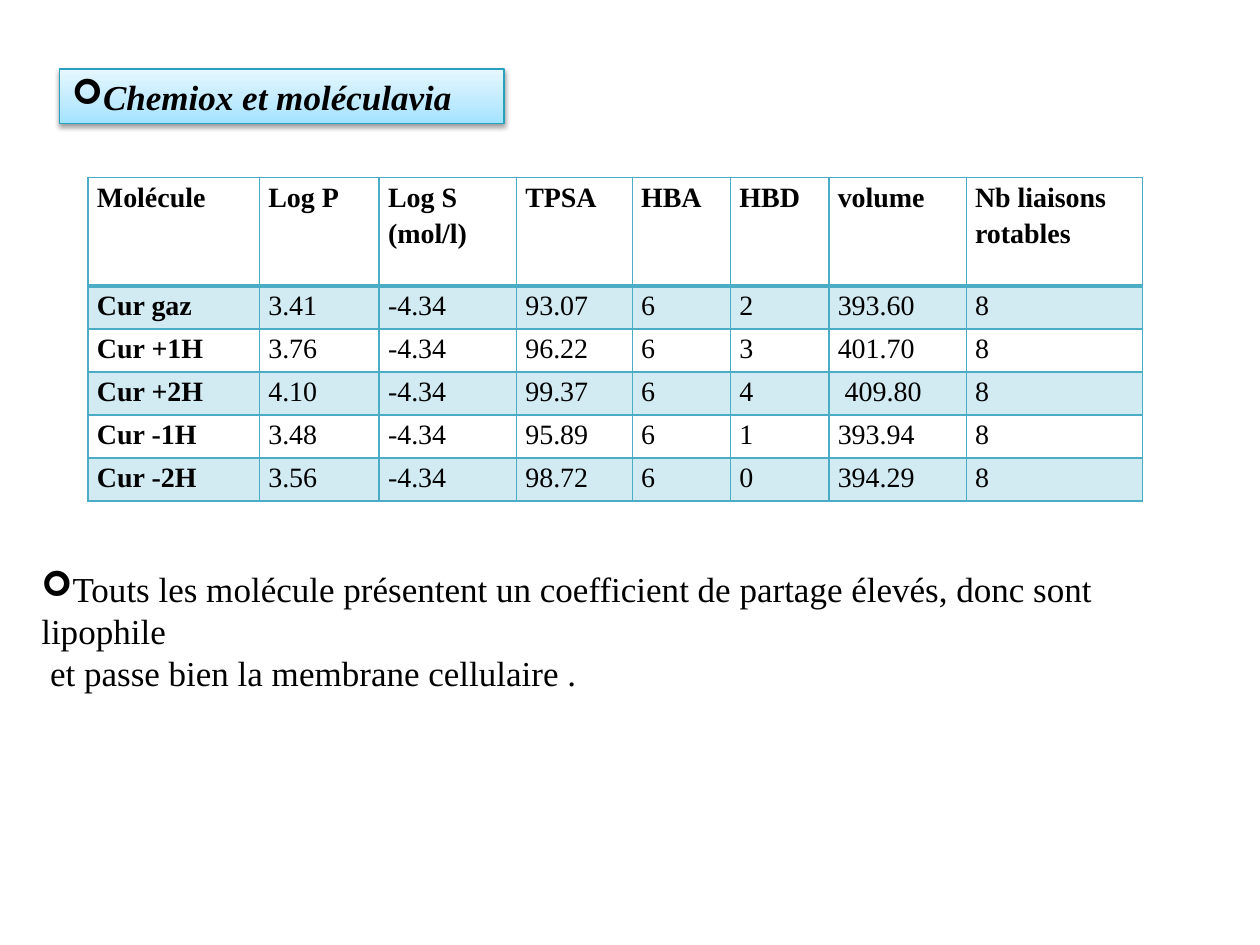
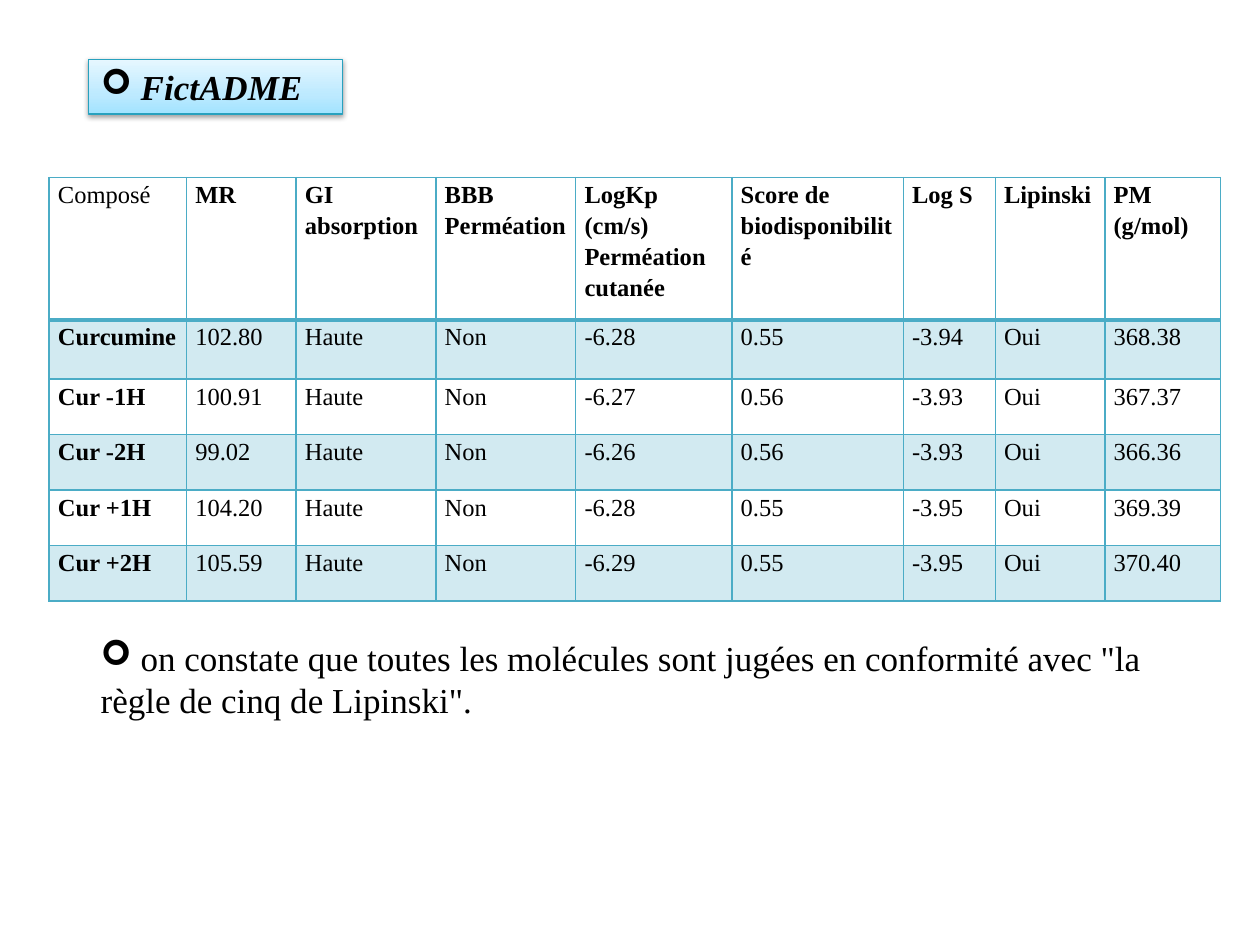
from pptx import Presentation, util as u
from pptx.dml.color import RGBColor
from pptx.enum import text as t
from pptx.oxml import parse_xml
from pptx.oxml.ns import nsdecls

FONT = "Times New Roman"
COLORS = {
    "ink": "000000",
    "title_line": "28A1BE",
    "grid": "4BACC6",
    "band": "D2EAF1",
}
TITLE_GRADIENT = [(0, "A1E3FF"), (35, "BDEAFF"), (100, "E6F7FF")]
WIDTH, HEIGHT = u.Inches(10), u.Inches(7.5)


# Lengths are percentages of the slide's width and height
def across(percent):
    return round(WIDTH * percent / 100)


def down(percent):
    return round(HEIGHT * percent / 100)


def area(left, top, width, height):
    return across(left), down(top), across(width), down(height)


def drawing_xml(tag, content="", attributes=""):
    return parse_xml(f'<a:{tag} {nsdecls("a")} {attributes}>{content}</a:{tag}>')


def write(frame, content, size=20, bold=False, italic=False, spacing=1.0, bullet=False):
    """Fill a frame; each line of content is a paragraph, the first may have a bullet."""
    frame.text = content
    frame.word_wrap = True
    for paragraph in frame.paragraphs:
        paragraph.alignment = t.PP_ALIGN.LEFT
        paragraph.line_spacing = spacing
        for run in paragraph.runs:
            font = run.font
            font.name, font.size = FONT, u.Pt(size)
            font.bold, font.italic = bold, italic
            font.color.rgb = RGBColor.from_string(COLORS["ink"])
    if bullet:
        properties = frame.paragraphs[0]._p.get_or_add_pPr()
        properties.set("marL", "0")
        properties.set("indent", "0")
        properties.append(drawing_xml("buFont", attributes='typeface="Wingdings"'))
        properties.append(drawing_xml("buChar", attributes='char="➢"'))


def add_title(slide, heading, box):
    """Title as a blue gradient label with a soft shadow."""
    title = slide.shapes.title
    title.left, title.top, title.width, title.height = area(*box)
    stops = "".join(
        f'<a:gs pos="{position * 1000}"><a:srgbClr val="{color}"/></a:gs>'
        for position, color in TITLE_GRADIENT)
    properties = title._element.spPr
    properties.append(drawing_xml(
        "gradFill", f'<a:gsLst>{stops}</a:gsLst><a:lin ang="16200000" scaled="0"/>'))
    title.line.color.rgb = RGBColor.from_string(COLORS["title_line"])
    title.line.width = u.Pt(0.75)
    properties.append(drawing_xml(
        "effectLst",
        '<a:outerShdw blurRad="40000" dist="20000" dir="5400000" rotWithShape="0">'
        f'<a:srgbClr val="{COLORS["ink"]}"><a:alpha val="38000"/></a:srgbClr>'
        '</a:outerShdw>'))
    frame = title.text_frame
    frame.auto_size = t.MSO_AUTO_SIZE.NONE
    frame.vertical_anchor = t.MSO_ANCHOR.TOP
    write(frame, heading, bold=True, italic=True, bullet=True)


def set_borders(cell, **widths):
    """Draw the sides L, R, T and B in the given widths, ahead of the fill."""
    properties = cell._tc.get_or_add_tcPr()
    for index, (side, width) in enumerate(widths.items()):
        properties.insert(index, drawing_xml(
            f"ln{side}",
            f'<a:solidFill><a:srgbClr val="{COLORS["grid"]}"/></a:solidFill>',
            f'w="{u.Pt(width)}"'))


def add_results(slide, rows, corner, columns, heights, size, plain_corner=False):
    """Banded table with a bold heading row and a bold first column."""
    box = area(*corner, sum(columns), sum(heights))
    table = slide.shapes.add_table(len(rows), len(columns), *box).table
    table.first_row = table.horz_banding = False
    for column, width in zip(table.columns, columns):
        column.width = across(width)
    for r, (values, height) in enumerate(zip(rows, heights)):
        table.rows[r].height = down(height)
        for c, value in enumerate(values):
            cell = table.cell(r, c)
            cell.margin_left = cell.margin_right = u.Inches(0.07)
            cell.margin_top = cell.margin_bottom = 0
            if r % 2:
                cell.fill.solid()
                cell.fill.fore_color.rgb = RGBColor.from_string(COLORS["band"])
            else:
                cell.fill.background()
            set_borders(cell, L=1, R=1, T=2.25 if r == 1 else 1, B=2.25 if r == 0 else 1)
            is_plain = plain_corner and r == c == 0
            write(cell.text_frame, value, size=size, spacing=1.15,
                  bold=(r == 0 or c == 0) and not is_plain)


def add_conclusion(slide, content, box):
    frame = slide.shapes.add_textbox(*area(*box)).text_frame
    write(frame, content, bullet=True)


PROPERTIES = [
    ("Molécule", "Log P", "Log S (mol/l)", "TPSA", "HBA", "HBD", "volume",
     "Nb liaisons rotables"),
    ("Cur gaz", "3.41", "-4.34", "93.07", "6", "2", "393.60", "8"),
    ("Cur +1H", "3.76", "-4.34", "96.22", "6", "3", "401.70", "8"),
    ("Cur +2H", "4.10", "-4.34", "99.37", "6", "4", " 409.80", "8"),
    ("Cur -1H", "3.48", "-4.34", "95.89", "6", "1", "393.94", "8"),
    ("Cur -2H", "3.56", "-4.34", "98.72", "6", "0", "394.29", "8"),
]


def absorption_row(compound, refractivity, permeation, score, solubility, mass):
    return (compound, refractivity, "Haute", "Non", permeation, score, solubility,
            "Oui", mass)


ABSORPTION = [
    ("Composé", "MR", "GI absorption", "BBB\nPerméation",
     "LogKp (cm/s)\nPerméation cutanée", "Score de biodisponibilité", "Log S",
     "Lipinski", "PM\n(g/mol)"),
    absorption_row("Curcumine", "102.80", "-6.28", "0.55", "-3.94", "368.38"),
    absorption_row("Cur -1H", "100.91", "-6.27", "0.56", "-3.93", "367.37"),
    absorption_row("Cur -2H", "99.02", "-6.26", "0.56", "-3.93", "366.36"),
    absorption_row("Cur +1H", "104.20", "-6.28", "0.55", "-3.95", "369.39"),
    absorption_row("Cur +2H", "105.59", "-6.29", "0.55", "-3.95", "370.40"),
]


def main():
    deck = Presentation()
    deck.slide_width, deck.slide_height = WIDTH, HEIGHT
    title_only = deck.slide_layouts[5]

    # Molecular properties
    slide = deck.slides.add_slide(title_only)
    add_title(slide, "Chemiox et moléculavia", (4.7, 7.3, 35.3, 5.8))
    add_results(slide, PROPERTIES, corner=(7, 18.8), size=16,
                columns=[13.6, 9.5, 10.9, 9.2, 7.8, 7.8, 10.9, 14],
                heights=[11.47] + [4.55] * 5)
    add_conclusion(
        slide,
        "Touts les molécule présentent un coefficient de partage élevés, "
        "donc sont lipophile\n et passe bien la membrane cellulaire .",
        (2.3, 59.4, 95.7, 10.3))

    # Absorption and the rule of five
    slide = deck.slides.add_slide(title_only)
    add_title(slide, " FictADME", (7, 6.27, 20.2, 5.8))
    add_results(slide, ABSORPTION, corner=(3.9, 18.8), size=14, plain_corner=True,
                columns=[10.9, 8.7, 11.1, 11.1, 12.4, 13.6, 7.3, 8.7, 9.2],
                heights=[15.07, 6.27] + [5.87] * 4)
    add_conclusion(
        slide,
        " on constate que toutes les molécules sont jugées en conformité avec "
        '"la règle de cinq de Lipinski".',
        (7, 66.7, 85.9, 10.3))

    deck.save("out.pptx")


if __name__ == "__main__":
    main()
